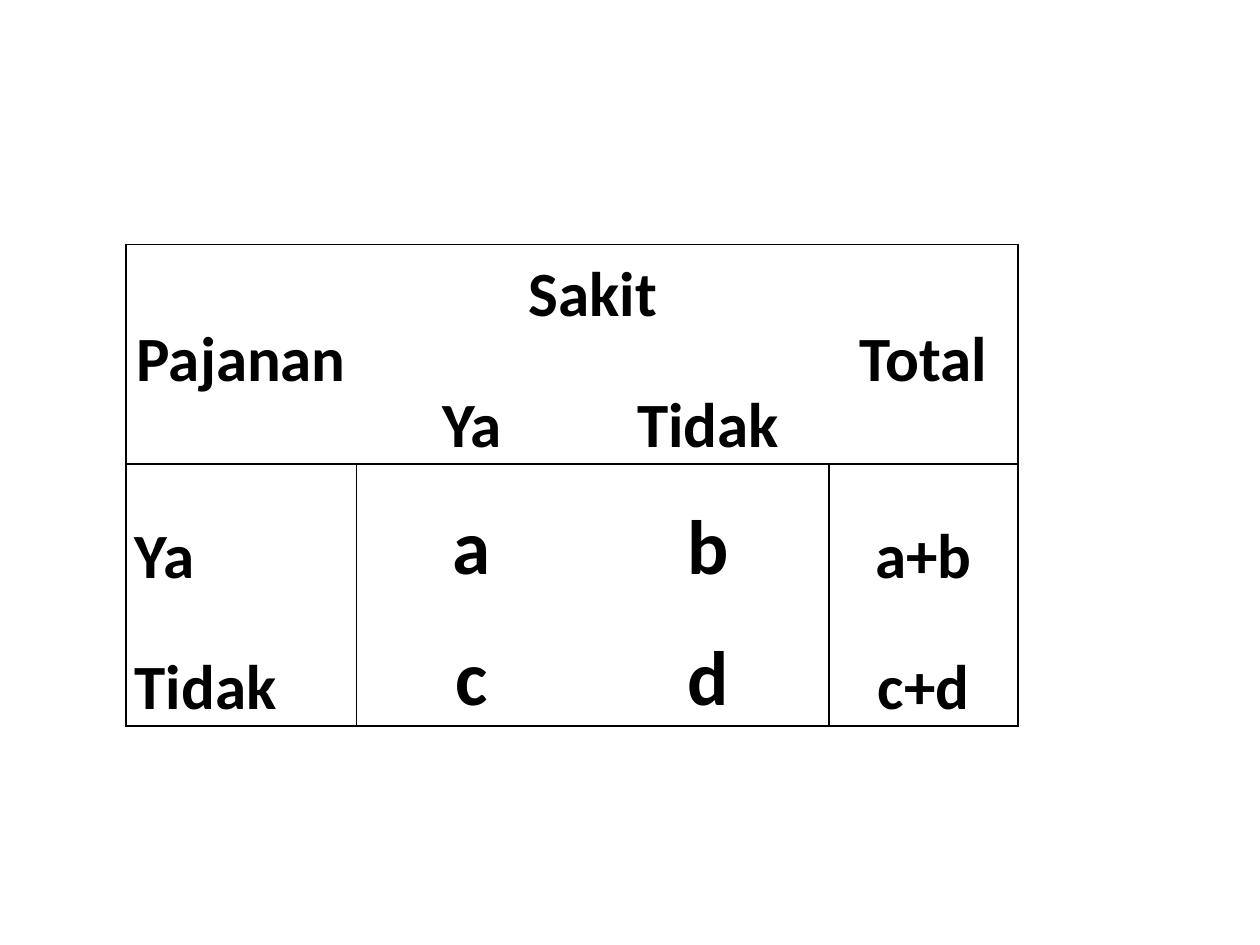
"""Build a slide with a two-by-two exposure and illness table."""
from lxml import etree
from pptx import Presentation
from pptx.dml.color import RGBColor
from pptx.enum.text import MSO_ANCHOR, PP_ALIGN
from pptx.oxml.ns import qn
from pptx.util import Inches, Pt

MIDDLE, BOTTOM = MSO_ANCHOR.MIDDLE, MSO_ANCHOR.BOTTOM
LEFT, CENTER = PP_ALIGN.LEFT, PP_ALIGN.CENTER

THEME = {"font": "Calibri", "ink": "000000", "label": 36, "count": 44, "border": 1}

ROWS = [
    ["Pajanan", "Sakit", "", "Total"],
    ["", "Ya", "Tidak", ""],
    ["Ya", "a", "b", "a+b"],
    ["Tidak", "c", "d", "c+d"],
]
MERGES = [((0, 0), (1, 0)), ((0, 1), (0, 2)), ((0, 3), (1, 3))]
OUTLINED_BLOCKS = [
    ((0, 0), (1, 3)),
    ((2, 0), (3, 0)),
    ((2, 1), (3, 2)),
    ((2, 3), (3, 3)),
]
COLUMN_WIDTHS = [1.83, 1.83, 1.92, 1.5]
ROW_HEIGHTS = [0.47, 1.04, 1.04, 1.04]
ORIGIN = (1, 1.94)
TABLE_HEIGHT = 3.8

TABLE_FORMAT = {"first_row": False, "horz_banding": False}
CELL_FORMAT = {
    "margin_left": Inches(0.07),
    "margin_right": Inches(0.07),
    "margin_top": 0,
    "margin_bottom": 0,
}


def apply_format(target, values):
    for name, value in values.items():
        setattr(target, name, value)


def draw_borders(cell, sides):
    properties = cell._tc.get_or_add_tcPr()
    for side in "LRTB":
        line = etree.SubElement(properties, qn(f"a:ln{side}"), w=str(Pt(THEME["border"])))
        if side in sides:
            fill = etree.SubElement(line, qn("a:solidFill"))
            etree.SubElement(fill, qn("a:srgbClr"), val=THEME["ink"])
        else:
            etree.SubElement(line, qn("a:noFill"))


def write_cell(cell, wording, row, column):
    is_count = row > 1 and column in (1, 2)
    apply_format(cell, CELL_FORMAT)
    cell.vertical_anchor = MIDDLE if row == 0 else BOTTOM
    paragraph = cell.text_frame.paragraphs[0]
    alignment = LEFT if row > 1 and column == 0 else CENTER
    apply_format(paragraph, {"alignment": alignment, "line_spacing": 1.15})
    run = paragraph.add_run()
    run.text = wording
    size = Pt(THEME["count" if is_count else "label"])
    apply_format(run.font, {"name": THEME["font"], "size": size, "bold": True})
    run.font.color.rgb = RGBColor.from_string(THEME["ink"])


def outline_block(table, first, last):
    (top, left), (bottom, right) = first, last
    for row in range(top, bottom + 1):
        for column in range(left, right + 1):
            edges = {"L": column == left, "R": column == right,
                     "T": row == top, "B": row == bottom}
            cell = table.cell(row, column)
            draw_borders(cell, [side for side, on_edge in edges.items() if on_edge])
            cell.fill.background()


def main():
    deck = Presentation()
    apply_format(deck, {"slide_width": Inches(10), "slide_height": Inches(7.5)})
    slide = deck.slides.add_slide(deck.slide_layouts[6])
    frame = slide.shapes.add_table(
        len(ROWS), len(COLUMN_WIDTHS), *map(Inches, ORIGIN),
        Inches(sum(COLUMN_WIDTHS)), Inches(TABLE_HEIGHT))
    table = frame.table
    apply_format(table, TABLE_FORMAT)
    for column, width in zip(table.columns, COLUMN_WIDTHS):
        column.width = Inches(width)
    for row, height in zip(table.rows, ROW_HEIGHTS):
        row.height = Inches(height)
    frame.height = Inches(TABLE_HEIGHT)
    for first, last in MERGES:
        table.cell(*first).merge(table.cell(*last))
    for row, wordings in enumerate(ROWS):
        for column, wording in enumerate(wordings):
            if wording:
                write_cell(table.cell(row, column), wording, row, column)
    for first, last in OUTLINED_BLOCKS:
        outline_block(table, first, last)
    deck.save("out.pptx")


if __name__ == "__main__":
    main()
